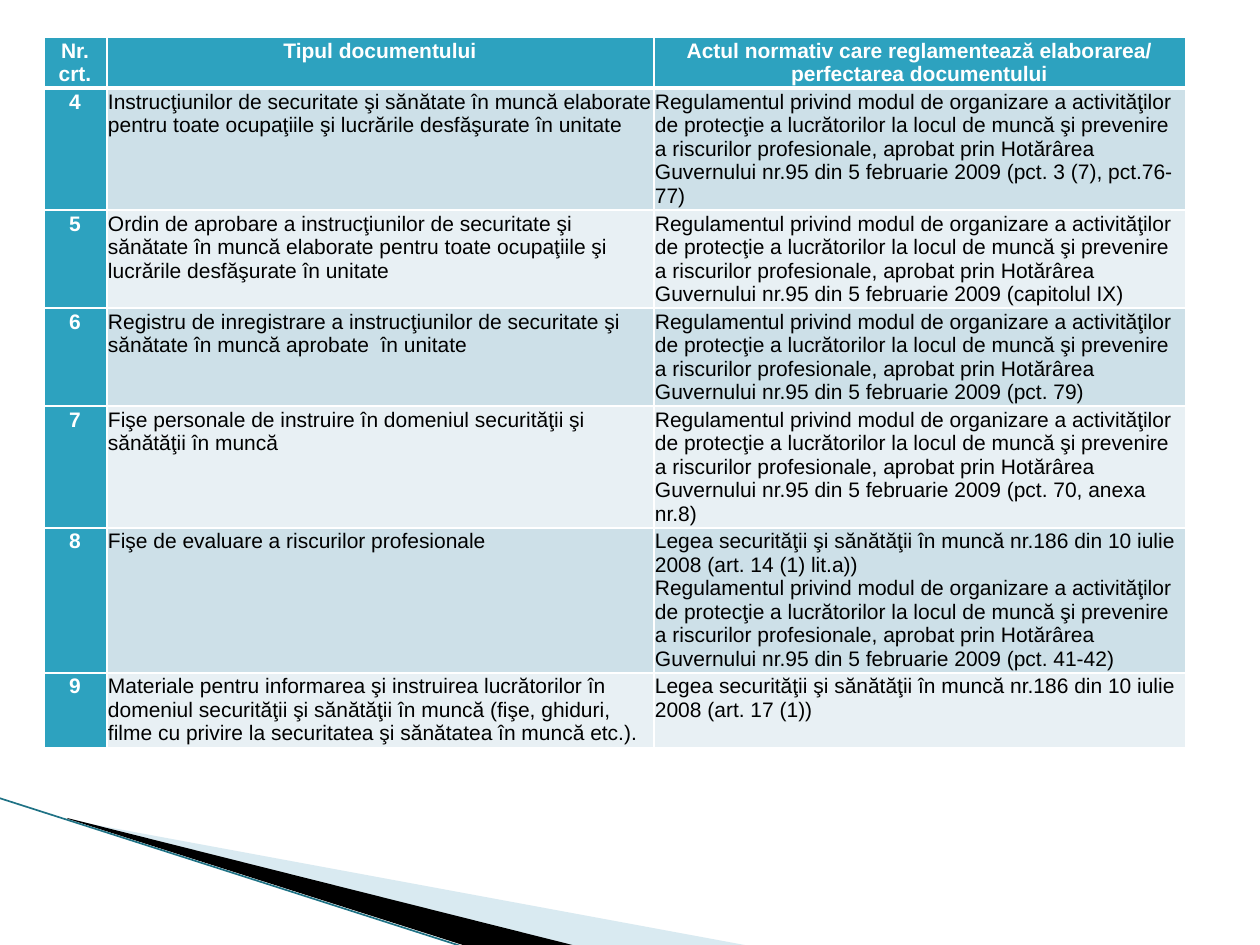
import pptx
import pptx.dml.color
import pptx.enum.text
import pptx.oxml
import pptx.oxml.ns
import pptx.util

EMU_PER_PX = 914400 / 126
WHITE, BLACK, TEAL = "FFFFFF", "000000", "2DA2BF"
BANDS = ("CDE0E8", "E8F0F4")
COLUMNS = (63, 547, 532)
ROWS = (49, 122, 98, 98, 121, 145, 75)

REGULATION = (
    "Regulamentul privind modul de organizare a activităţilor de protecţie a "
    "lucrătorilor la locul de muncă şi prevenire a riscurilor profesionale, aprobat "
    "prin Hotărârea Guvernului nr.95 din 5 februarie 2009 "
)
LAW = "Legea securităţii şi sănătăţii în muncă nr.186 din 10 iulie 2008 "
HEADINGS = (
    "Nr. crt.",
    "Tipul documentului",
    "Actul normativ care reglamentează elaborarea/ perfectarea documentului",
)
DOCUMENTS = (
    ("Instrucţiunilor de securitate şi sănătate în muncă elaborate pentru toate "
     "ocupaţiile şi lucrările desfăşurate în unitate",
     [REGULATION + "(pct. 3 (7), pct.76-77)"]),
    ("Ordin de aprobare a instrucţiunilor de securitate şi sănătate în muncă elaborate "
     "pentru toate ocupaţiile şi lucrările desfăşurate în unitate",
     [REGULATION + "(capitolul IX)"]),
    ("Registru de inregistrare a instrucţiunilor de securitate şi sănătate în muncă "
     "aprobate  în unitate",
     [REGULATION + "(pct. 79)"]),
    ("Fişe personale de instruire în domeniul securităţii şi sănătăţii în muncă",
     [REGULATION + "(pct. 70, anexa nr.8)"]),
    ("Fişe de evaluare a riscurilor profesionale",
     [LAW + "(art. 14 (1) lit.a))", REGULATION + "(pct. 41-42)"]),
    ("Materiale pentru informarea şi instruirea lucrătorilor în domeniul securităţii şi "
     "sănătăţii în muncă (fişe, ghiduri, filme cu privire la securitatea şi sănătatea în "
     "muncă etc.).",
     [LAW + "(art. 17 (1))"]),
)


def px(length):
    return pptx.util.Emu(round(length * EMU_PER_PX))


def color(value):
    return pptx.dml.color.RGBColor.from_string(value)


def add_element(parent, tag, **attributes):
    element = pptx.oxml.parse_xml(f"<{tag} {pptx.oxml.ns.nsdecls('a')}/>")
    for name, value in attributes.items():
        element.set(name, str(value))
    parent.append(element)
    return element


class SlideBuilder:
    """Draw styled elements on the current slide."""

    font, size = "Arial", 12

    def __init__(self, page):
        self.page = page

    def wedge(self, points, fill, opacity=100):
        builder = self.page.shapes.build_freeform(*points[0], scale=EMU_PER_PX)
        builder.add_line_segments(points[1:], close=True)
        shape = builder.convert_to_shape()
        shape.shadow.inherit = False
        shape.line.fill.background()
        shape.fill.solid()
        shape.fill.fore_color.rgb = color(fill)
        if opacity < 100:
            tint = shape.fill._xPr.find(".//" + pptx.oxml.ns.qn("a:srgbClr"))
            add_element(tint, "a:alpha", val=opacity * 1000)

    def line(self, start, end, stroke, width):
        connector = self.page.shapes.add_connector(1, *map(px, start + end))
        connector.line.color.rgb = color(stroke)
        connector.line.width = pptx.util.Pt(width)
        add_element(connector._element.spPr, "a:effectLst")

    def table(self, left, top, columns, rows):
        frame = self.page.shapes.add_table(
            len(rows), len(columns), px(left), px(top), px(sum(columns)), px(sum(rows)))
        for column, width in zip(frame.table.columns, columns):
            column.width = px(width)
        for row, height in zip(frame.table.rows, rows):
            row.height = px(height)
        return frame.table

    def cell(self, cell, texts, fill, ink=BLACK, strong=False, top=1, bottom=1):
        cell.margin_left = px(1)
        cell.margin_top = cell.margin_right = cell.margin_bottom = px(2)
        properties = cell._tc.get_or_add_tcPr()
        for side, width in (("L", 1), ("R", 1), ("T", top), ("B", bottom)):
            border = add_element(properties, f"a:ln{side}", w=pptx.util.Pt(width))
            add_element(add_element(border, "a:solidFill"), "a:srgbClr", val=WHITE)
        cell.fill.solid()
        cell.fill.fore_color.rgb = color(fill)
        align = pptx.enum.text.PP_ALIGN
        for index, text in enumerate(texts):
            frame = cell.text_frame
            para = frame.add_paragraph() if index else frame.paragraphs[0]
            para.alignment = align.CENTER if strong else align.LEFT
            span = para.add_run()
            span.text = text
            span.font.name = self.font
            span.font.size = pptx.util.Pt(self.size)
            span.font.bold = strong
            span.font.color.rgb = color(ink)


def main():
    deck = pptx.Presentation()
    deck.slide_width, deck.slide_height = px(1260), px(945)
    slide = SlideBuilder(deck.slides.add_slide(deck.slide_layouts[6]))

    slide.wedge([(69, 820), (750, 946), (575, 946), (69, 819)], "A0CBDC", opacity=40)
    slide.wedge([(67, 818), (576, 946), (469, 947), (68, 819)], BLACK)
    slide.line((-1, 798), (467, 948), "1F7285", 0.95)

    table = slide.table(44, 37, COLUMNS, ROWS)
    for column, heading in enumerate(HEADINGS):
        slide.cell(table.cell(0, column), [heading], TEAL, WHITE, strong=True, bottom=3)
    for row, (document, acts) in enumerate(DOCUMENTS, start=1):
        top = 3 if row == 1 else 1
        band = BANDS[(row - 1) % 2]
        slide.cell(table.cell(row, 0), [str(row + 3)], TEAL, WHITE, strong=True, top=top)
        slide.cell(table.cell(row, 1), [document], band, top=top)
        slide.cell(table.cell(row, 2), acts, band, top=top)

    deck.save("out.pptx")


if __name__ == "__main__":
    main()
